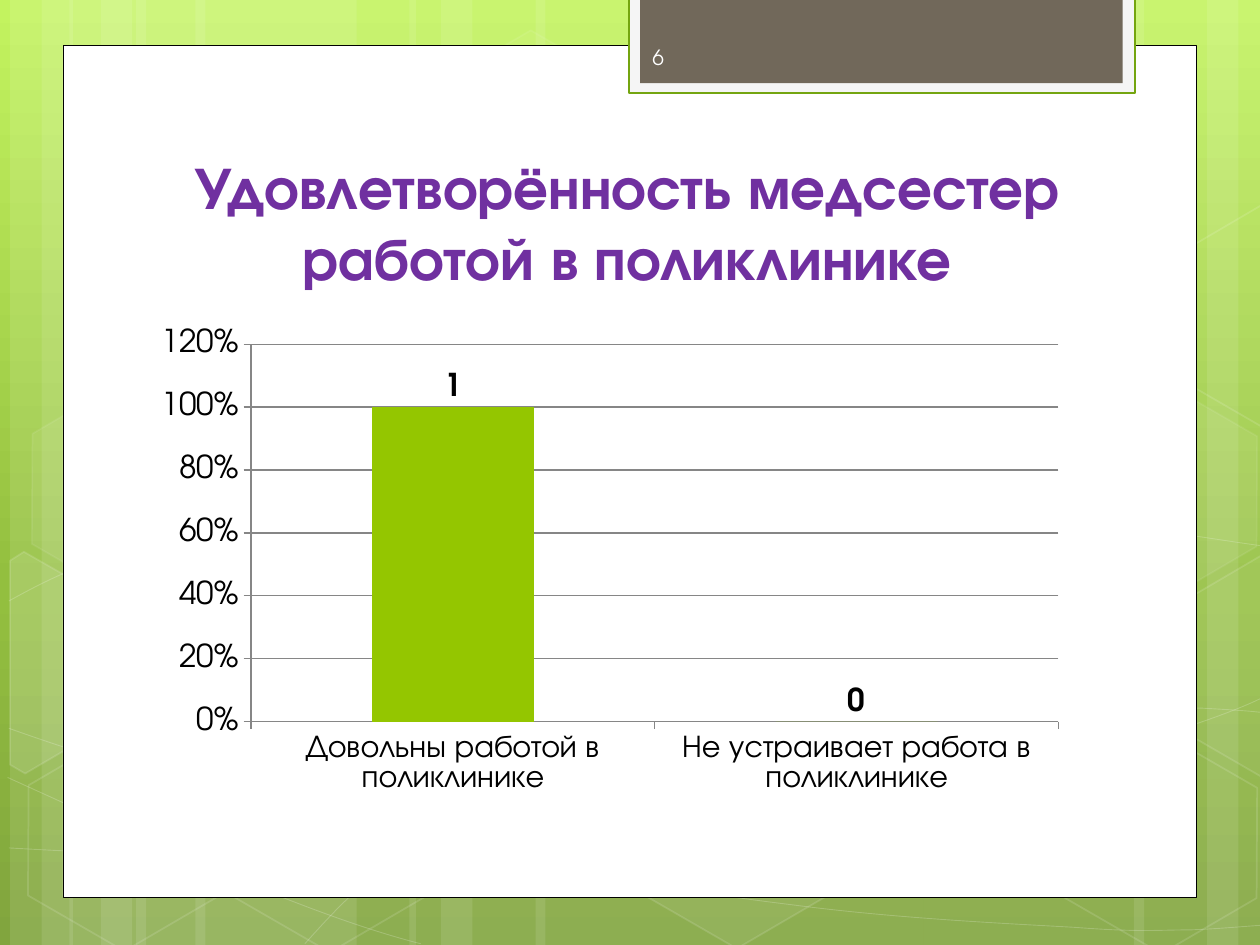
from copy import deepcopy

from lxml import etree
from pptx import Presentation
from pptx.chart.data import CategoryChartData
from pptx.dml.color import RGBColor
from pptx.enum.chart import XL_CHART_TYPE, XL_LABEL_POSITION, XL_TICK_MARK
from pptx.enum.shapes import MSO_SHAPE
from pptx.enum.text import MSO_ANCHOR, PP_ALIGN
from pptx.oxml.ns import qn
from pptx.util import Inches, Pt

RECTANGLE, HEXAGON = MSO_SHAPE.RECTANGLE, MSO_SHAPE.HEXAGON
COLUMNS = XL_CHART_TYPE.COLUMN_CLUSTERED
LABEL_ABOVE = XL_LABEL_POSITION.OUTSIDE_END
TICK_OUT, TICK_NONE = XL_TICK_MARK.OUTSIDE, XL_TICK_MARK.NONE
LEFT, CENTER = PP_ALIGN.LEFT, PP_ALIGN.CENTER
MIDDLE, BOTTOM = MSO_ANCHOR.MIDDLE, MSO_ANCHOR.BOTTOM

FONT = "TeX Gyre Adventor"
COLORS = {
    "white": "FFFFFF", "black": "000000", "frame": "F5F5F5", "olive": "74A510",
    "tab": "71685A", "title": "7030A0", "number": "FEFEFE", "bar": "94C600",
    "grid": "868686",
}
BACKGROUND = [(0, "C3F35F"), (0.62, "93BF3F"), (1, "81A53E")]

# Light vertical bands: left, width
BANDS = [
    (1.08, 1.75), (0.08, 0.5), (0.33, 0.83), (1.55, 1.75), (0.55, 0.5), (0.8, 0.83),
    (7.33, 1.75), (9.58, 0.5), (9, 0.83), (4.25, 3.08), (3.25, 0.5), (3.5, 0.83),
]
# Wavy lines: a start point, then two control points and an end point per segment
WAVES = [
    [(0.07, 6.73), (0.61, 6.76), (1.15, 6.79), (1.9, 6.78), (2.65, 6.77), (3.58, 6.75),
     (4.58, 6.65), (5.58, 6.55), (7, 6.36), (7.92, 6.17), (8.83, 5.98), (9.77, 5.68),
     (10.07, 5.51)],
    [(0.07, 4.77), (0.36, 4.61), (0.65, 4.46), (1.21, 4.31), (1.78, 4.16), (2.59, 3.94),
     (3.47, 3.87), (4.36, 3.8), (5.44, 3.79), (6.54, 3.87), (7.64, 3.95), (9.47, 4.26),
     (10.07, 4.34)],
    [(0.06, 6.17), (1.27, 6.72), (2.47, 7.27), (3.34, 7.49)],
    [(0.07, 5.78), (0.38, 5.89), (0.7, 6), (1.28, 6.16), (1.86, 6.31), (2.73, 6.56),
     (3.57, 6.73), (4.4, 6.9), (5.45, 7.08), (6.28, 7.18), (7.11, 7.29), (8, 7.33),
     (8.53, 7.36), (9.05, 7.4), (9.19, 7.38), (9.45, 7.38), (9.71, 7.37), (9.89, 7.35),
     (10.07, 7.34)],
    [(2.42, 7.49), (2.6, 7.29), (2.78, 7.09), (3.02, 6.91), (3.26, 6.73), (3.6, 6.53),
     (3.88, 6.39), (4.16, 6.25), (4.33, 6.19), (4.7, 6.09), (5.06, 5.99), (5.73, 5.85),
     (6.08, 5.78), (6.44, 5.71), (6.49, 5.71), (6.8, 5.69), (7.11, 5.66), (7.6, 5.63),
     (7.94, 5.62), (8.29, 5.61), (8.86, 5.62), (8.86, 5.62), (9.1, 5.62), (9.3, 5.62),
     (9.53, 5.62), (9.71, 5.63), (9.88, 5.64), (9.97, 5.65), (10.06, 5.66), (10.03, 5.65),
     (10.06, 5.66)],
]
# Hexagons: left, top, fill opacity, line opacity
HEXAGONS = [
    (3.34, 0.36, 4, 8), (4.97, 5.89, 6, 12), (0.11, 5.91, 0, 12), (0.14, 3.12, 7, 8),
    (1.74, 5.92, 0, 12), (7.53, 4.53, 10, 12), (8.34, 5.93, 0, 12), (8.34, 3.14, 7, 8),
]
# Hexagons cut near the slide edge: points, fill opacity
CUT_HEXAGONS = [
    ([(0.08, 4.45), (0.19, 4.38), (0.96, 4.82), (0.95, 5.7), (0.2, 6.14), (0.08, 6.07)], 10),
    ([(9.26, 4.85), (10.01, 4.41), (10.09, 4.46), (10.09, 6.13), (10.02, 6.17),
      (9.26, 5.73)], 4),
    ([(9.26, 2.07), (10.01, 1.63), (10.1, 1.68), (10.09, 3.35), (10.02, 3.39),
      (9.26, 2.95)], 0),
]


def rgb(name):
    return RGBColor.from_string(COLORS[name])


def box(left, top, width, height):
    return Inches(left), Inches(top), Inches(width), Inches(height)


def set_opacity(fill_parent, percent):
    color = fill_parent.find(qn("a:solidFill"))[0]
    etree.SubElement(color, qn("a:alpha")).set("val", str(percent * 1000))


def format_font(font, size, color="black", bold=False):
    font.name, font.size, font.bold = FONT, Pt(size), bold
    font.color.rgb = rgb(color)


def write_text(frame, text, size, color, bold=False, align=LEFT, anchor=MIDDLE):
    frame.word_wrap, frame.vertical_anchor = True, anchor
    paragraph = frame.paragraphs[0]
    paragraph.alignment = align
    run = paragraph.add_run()
    run.text = text
    format_font(run.font, size, color, bold)


def bend_segments(shape):
    """Turn every three line segments into one cubic Bezier segment."""
    outline = next(shape.element.iter(qn("a:path")))
    lines = outline.findall(qn("a:lnTo"))
    for start in range(0, len(lines), 3):
        curve = etree.SubElement(outline, qn("a:cubicBezTo"))
        for line in lines[start:start + 3]:
            curve.append(line[0])
            outline.remove(line)


class SlideBuilder:
    def __init__(self, slide):
        self.slide = slide

    def background(self, stops):
        fill = self.slide.background.fill
        fill.gradient()
        fill.gradient_angle = 270
        stop_list = next(self.slide.element.iter(qn("a:gsLst")))
        stop_list.append(deepcopy(stop_list[-1]))
        for stop, (position, color) in zip(fill.gradient_stops, stops):
            stop.position = position
            stop.color.rgb = RGBColor.from_string(color)

    def style(self, shape, fill=None, line=None, width=1, fill_opacity=100, line_opacity=100):
        shape.shadow.inherit = False
        if fill and fill_opacity:
            shape.fill.solid()
            shape.fill.fore_color.rgb = rgb(fill)
            if fill_opacity < 100:
                set_opacity(shape.element.spPr, fill_opacity)
        else:
            shape.fill.background()
        if line:
            shape.line.color.rgb = rgb(line)
            shape.line.width = Pt(width)
            if line_opacity < 100:
                set_opacity(shape.element.spPr.find(qn("a:ln")), line_opacity)
        else:
            shape.line.fill.background()

    def shape(self, kind, place, **look):
        shape = self.slide.shapes.add_shape(kind, *box(*place))
        self.style(shape, **look)
        return shape

    def outline(self, points, close, **look):
        start, *others = [(Inches(x), Inches(y)) for x, y in points]
        builder = self.slide.shapes.build_freeform(*start)
        builder.add_line_segments(others, close=close)
        shape = builder.convert_to_shape()
        self.style(shape, **look)
        return shape

    def text(self, place, text, **look):
        write_text(self.slide.shapes.add_textbox(*box(*place)).text_frame, text, **look)

    def column_chart(self, place, categories, values):
        data = CategoryChartData()
        data.categories = categories
        data.add_series("Series 1", values)
        chart = self.slide.shapes.add_chart(COLUMNS, *box(*place), data).chart
        chart.has_legend = chart.has_title = False
        format_font(chart.font, 18)
        # Columns and their labels
        plot = chart.plots[0]
        plot.gap_width, plot.vary_by_categories = 150, False
        fill = plot.series[0].format.fill
        fill.solid()
        fill.fore_color.rgb = rgb("bar")
        plot.has_data_labels = True
        labels = plot.data_labels
        labels.show_value, labels.position = True, LABEL_ABOVE
        format_font(labels.font, 18, bold=True)
        # Axes
        for axis in (chart.category_axis, chart.value_axis):
            axis.major_tick_mark, axis.minor_tick_mark = TICK_OUT, TICK_NONE
            axis.format.line.color.rgb = rgb("grid")
            format_font(axis.tick_labels.font, 18)
        axis = chart.value_axis
        axis.minimum_scale, axis.maximum_scale, axis.major_unit = 0, 1.2, 0.2
        axis.tick_labels.number_format = "0%"
        axis.tick_labels.number_format_is_linked = False
        axis.major_gridlines.format.line.color.rgb = rgb("grid")
        # Position of the plot inside the chart
        area = next(chart.element.iter(qn("c:plotArea")))
        for old in area.findall(qn("c:layout")):
            area.remove(old)
        layout = etree.Element(qn("c:layout"))
        area.insert(0, layout)
        manual = etree.SubElement(layout, qn("c:manualLayout"))
        for tag, value in (("layoutTarget", "inner"), ("xMode", "edge"), ("yMode", "edge"),
                           ("x", "0.115"), ("y", "0.05"), ("w", "0.865"), ("h", "0.78")):
            etree.SubElement(manual, qn("c:" + tag)).set("val", value)


def main():
    presentation = Presentation()
    presentation.slide_width, presentation.slide_height = Inches(10), Inches(7.5)
    builder = SlideBuilder(presentation.slides.add_slide(presentation.slide_layouts[6]))
    # Backdrop
    builder.background(BACKGROUND)
    for left, width in BANDS:
        builder.shape(RECTANGLE, (left, 0, width, 7.5), fill="white", fill_opacity=10)
    for nodes in WAVES:
        bend_segments(builder.outline(nodes, False, line="white", width=0.5, line_opacity=20))
    for left, top, fill_opacity, line_opacity in HEXAGONS:
        hexagon = builder.shape(HEXAGON, (left, top, 1.75, 1.52), fill="white", line="white",
                                fill_opacity=fill_opacity, line_opacity=line_opacity)
        hexagon.rotation = 30
        hexagon.adjustments[0] = 0.285
    for points, fill_opacity in CUT_HEXAGONS:
        builder.outline(points, True, fill="white", line="white",
                        fill_opacity=fill_opacity, line_opacity=12)
    # Panel and top tab
    builder.shape(RECTANGLE, (0.5, 0.36, 9, 6.76), fill="white", line="black", width=0.5)
    builder.shape(RECTANGLE, (4.99, -0.02, 4.02, 0.76), fill="frame", line="olive", width=1.25)
    builder.shape(RECTANGLE, (5.08, -0.02, 3.83, 0.68), fill="tab")
    # Content
    builder.text((1.14, 1.12, 7.68, 1.25), "Удовлетворённость медсестер работой в поликлинике",
                 size=34, color="title", bold=True, align=CENTER, anchor=BOTTOM)
    builder.column_chart((1.14, 2.54, 7.41, 3.84),
                         ["Довольны работой в поликлинике",
                          "Не устраивает работа в поликлинике"], [1, 0])
    builder.text((5.08, 0.25, 1.46, 0.4), "6", size=12, color="number")
    presentation.save("out.pptx")


if __name__ == "__main__":
    main()
